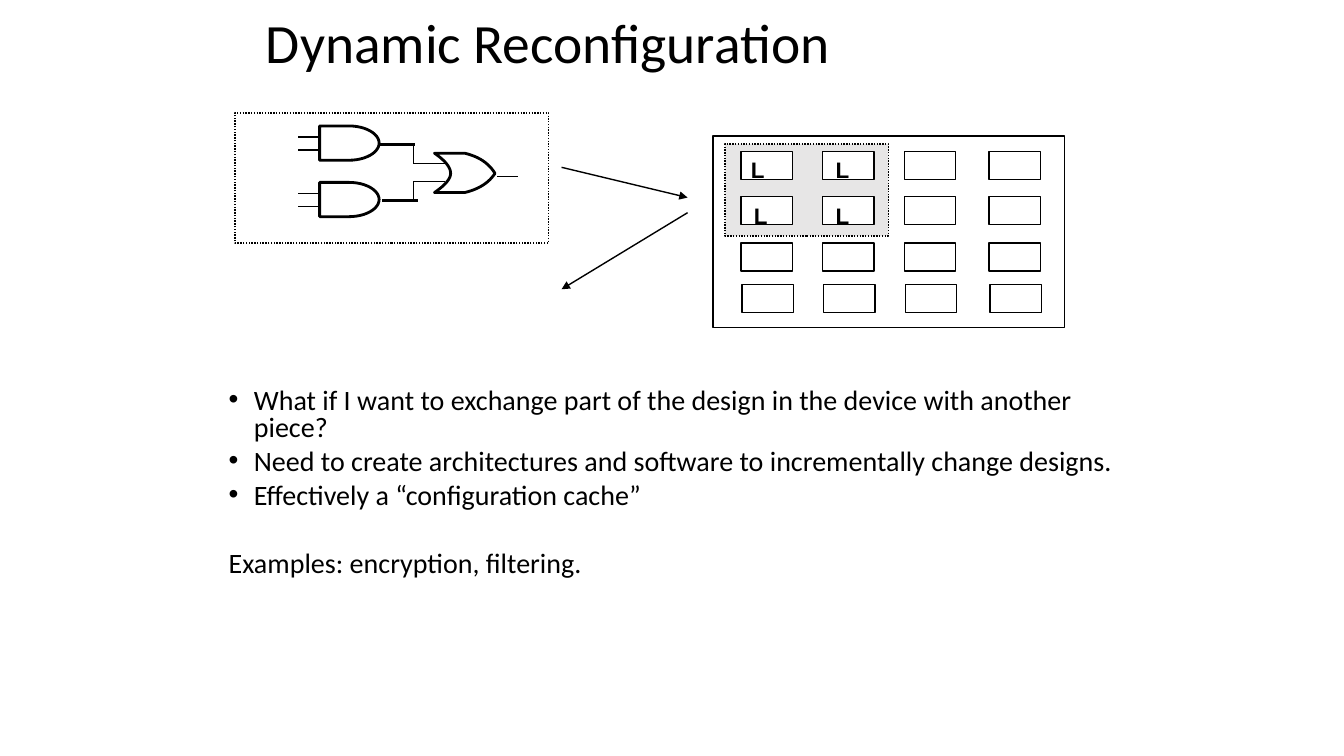
import math

from lxml import etree
from pptx import Presentation
from pptx import util as u
from pptx.dml.color import RGBColor
from pptx.enum import dml, shapes, text
from pptx.oxml.ns import qn

BLACK, WHITE, SHADE = "000000", "FFFFFF", "E7E6E6"
BULLETS = [
    "What if I want to exchange part of the design in the device with another piece?",
    "Need to create architectures and software to incrementally change designs.",
    "Effectively a “configuration cache”",
]
EXAMPLES = "Examples: encryption, filtering."


def color(hex_code):
    """Return the colour for a hex string."""
    return RGBColor.from_string(hex_code)


def box(slide, left, top, width, height, fill=WHITE, dotted=False):
    """Add a thinly outlined rectangle."""
    rect = slide.shapes.add_shape(
        shapes.MSO_SHAPE.RECTANGLE, *map(u.Inches, (left, top, width, height)))
    rect.shadow.inherit = False
    rect.fill.solid()
    rect.fill.fore_color.rgb = color(fill)
    rect.line.color.rgb = color(BLACK)
    rect.line.width = u.Pt(1)
    if dotted:
        rect.line.dash_style = dml.MSO_LINE.ROUND_DOT


def wire(slide, x1, y1, x2, y2, width=1, arrow=False):
    """Add a straight line, with an arrowhead at its end if asked."""
    line = slide.shapes.add_connector(
        shapes.MSO_CONNECTOR.STRAIGHT, *map(u.Inches, (x1, y1, x2, y2)))
    line.line.color.rgb = color(BLACK)
    line.line.width = u.Pt(width)
    if arrow:
        etree.SubElement(line.line._get_or_add_ln(), qn("a:tailEnd"), type="triangle")
    etree.SubElement(line._element.spPr, qn("a:effectLst"))


def gate(slide, points):
    """Add a closed gate outline through points in inches."""
    corners = [(u.Inches(x), u.Inches(y)) for x, y in points]
    builder = slide.shapes.build_freeform(*corners[0])
    builder.add_line_segments(corners[1:], close=True)
    outline = builder.convert_to_shape()
    outline.shadow.inherit = False
    outline.fill.background()
    outline.line.color.rgb = color(BLACK)
    outline.line.width = u.Pt(2)


def curve(start, control, end, steps=12):
    """Return points along a quadratic curve."""
    return [tuple((1 - t) ** 2 * a + 2 * t * (1 - t) * b + t * t * c
                  for a, b, c in zip(start, control, end))
            for t in (i / steps for i in range(steps + 1))]


def and_gate(slide, left, top):
    """Draw an AND gate with its two inputs."""
    flat, bulge, radius = 0.29, 0.3, 0.17
    angles = [math.pi * (i / 24 - 0.5) for i in range(25)]
    arc = [(left + flat + bulge * math.cos(a), top + radius * (1 + math.sin(a)))
           for a in angles]
    gate(slide, [(left, top), *arc, (left, top + 2 * radius)])
    for drop in (0.11, 0.24):
        wire(slide, left - 0.21, top + drop, left, top + drop)


def or_gate(slide, left, top):
    """Draw an OR gate with its output."""
    right, bottom, middle = left + 0.6, top + 0.39, top + 0.2
    shoulder, notch = left + 0.3, left + 0.16
    nose_top = curve((shoulder, top), (left + 0.51, top + 0.05), (right, middle))
    nose_bottom = curve((right, middle), (left + 0.51, bottom - 0.05), (shoulder, bottom))
    back_bottom = curve((left, bottom), (notch, bottom - 0.11), (notch, middle))
    back_top = curve((notch, middle), (notch, top + 0.11), (left, top))
    gate(slide, nose_top + nose_bottom + back_bottom + back_top)
    wire(slide, right + 0.02, top + 0.23, right + 0.23, top + 0.23)


def circuit(slide, left, top, width, height):
    """Draw the dotted box with the logic circuit."""
    box(slide, left, top, width, height, dotted=True)
    joint = left + 1.77
    for gate_top, out_left, or_input in ((0.13, 1.43, 0.5), (0.69, 1.46, 0.68)):
        and_gate(slide, left + 0.84, top + gate_top)
        out = top + gate_top + 0.18
        wire(slide, left + out_left, out, left + out_left + 0.36, out, 2)
        wire(slide, joint, out, joint, top + or_input)
        wire(slide, joint, top + or_input, joint + 0.31, top + or_input)
    or_gate(slide, left + 1.98, top + 0.4)


def write(run_font, size, name="Calibri", bold=False):
    """Format the font of a run."""
    run_font.size = u.Pt(size)
    run_font.name = name
    run_font.bold = bold
    run_font.color.rgb = color(BLACK)


def text_frame(slide, left, top, width, height, wrap=True):
    """Add a text box and return its frame."""
    frame = slide.shapes.add_textbox(
        *map(u.Inches, (left, top, width, height))).text_frame
    frame.word_wrap = wrap
    return frame


def device(slide, left, top, width, height):
    """Draw the device with its cells and the shaded configured block."""
    box(slide, left, top, width, height)
    box(slide, left + 0.12, top + 0.08, 1.62, 0.91, SHADE, dotted=True)
    for row, cell_top in enumerate((0.15, 0.6, 1.06, 1.47)):
        shift = 0.01 if row == 3 else 0
        for cell_left in (0.28, 1.09, 1.9, 2.74):
            box(slide, left + cell_left + shift, top + cell_top, 0.51, 0.28)
    for label_left, label_top in ((0.28, 0.15), (1.12, 0.15), (0.31, 0.61), (1.12, 0.61)):
        frame = text_frame(slide, left + label_left, top + label_top, 0.34, 0.37, wrap=False)
        frame.auto_size = text.MSO_AUTO_SIZE.SHAPE_TO_FIT_TEXT
        frame.text = "L"
        write(frame.paragraphs[0].runs[0].font, 16, "Arial", bold=True)


def title(slide, left, top, width, height):
    """Write the slide title."""
    frame = text_frame(slide, left, top, width, height)
    frame.vertical_anchor = text.MSO_ANCHOR.MIDDLE
    frame.text = "Dynamic Reconfiguration"
    heading = frame.paragraphs[0]
    heading.line_spacing = 0.9
    write(heading.runs[0].font, 39.6)


def body(slide, left, top, width, height):
    """Write the bullets and the closing line."""
    frame = text_frame(slide, left, top, width, height)
    frame.text = "\n".join(BULLETS + [EXAMPLES])
    for point in frame.paragraphs:
        bulleted = point.text != EXAMPLES
        point.line_spacing = 0.8
        point.space_before = u.Pt(5 if bulleted else 29.5)
        props = point._p.get_or_add_pPr()
        props.set("marL", str(u.Inches(0.75)))
        props.set("indent", str(u.Inches(-0.25)))
        if bulleted:
            etree.SubElement(props, qn("a:buFont"), typeface="Arial")
            etree.SubElement(props, qn("a:buChar"), char="•")
        else:
            etree.SubElement(props, qn("a:buNone"))
        write(point.runs[0].font, 20)


def main():
    """Build and save the slide."""
    deck = Presentation()
    deck.slide_width, deck.slide_height = u.Inches(13.33), u.Inches(7.5)
    slide = deck.slides.add_slide(deck.slide_layouts[6])
    title(slide, 2.54, 0.33, 7.27, 0.25)
    body(slide, 1.67, 3.81, 9.67, 2.62)
    circuit(slide, 2.33, 1.12, 3.11, 1.29)
    device(slide, 7.07, 1.35, 3.49, 1.9)
    wire(slide, 5.57, 1.66, 6.82, 1.96, arrow=True)
    wire(slide, 6.82, 2.11, 5.57, 2.87, arrow=True)
    deck.save("out.pptx")


if __name__ == "__main__":
    main()
